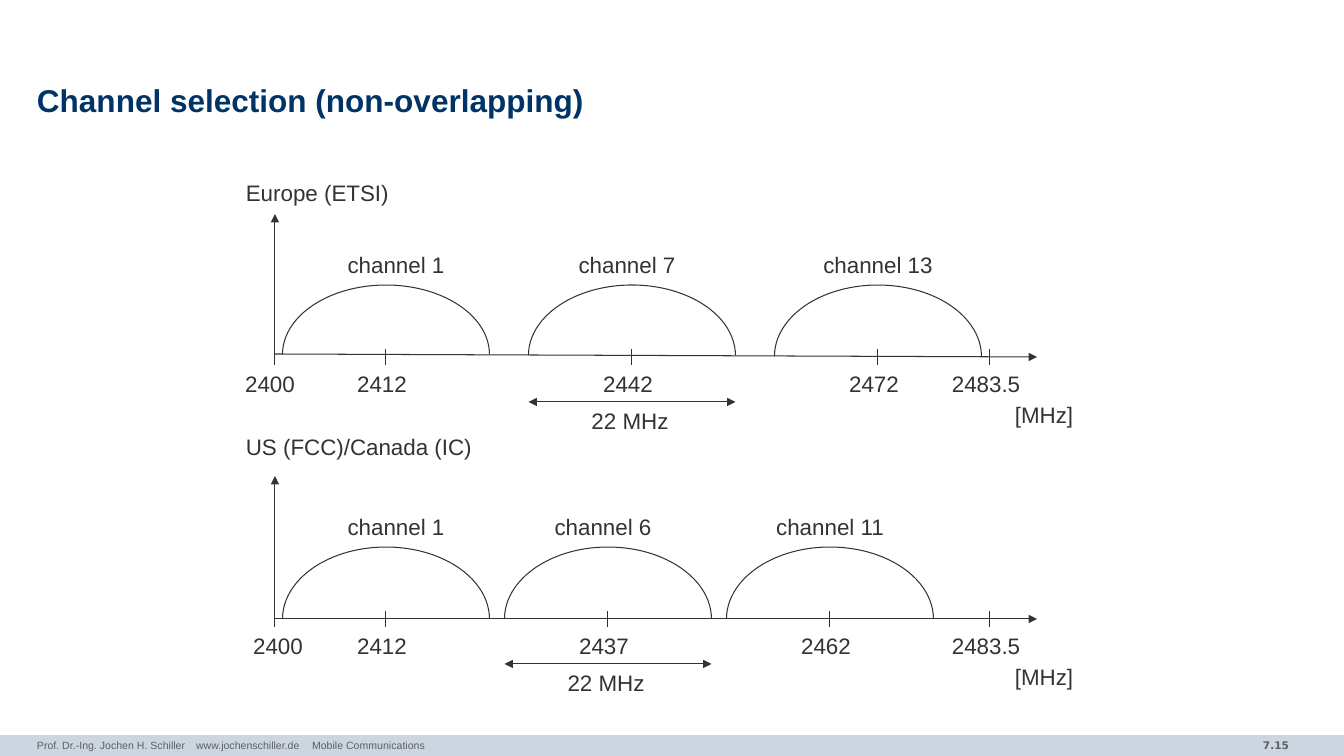
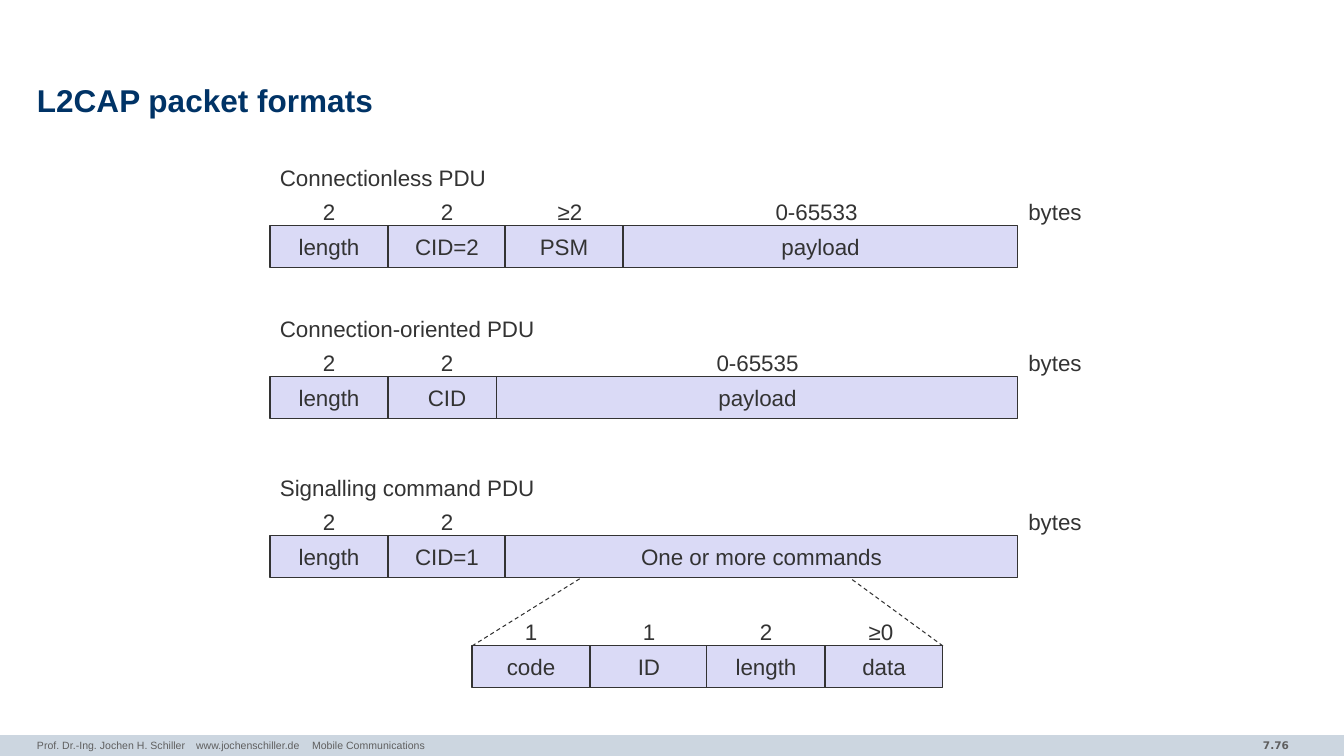
from lxml.etree import SubElement
from pptx import Presentation
from pptx.dml.color import RGBColor
from pptx.enum.dml import MSO_LINE
from pptx.enum.shapes import MSO_CONNECTOR, MSO_SHAPE
from pptx.enum.text import MSO_ANCHOR as Anchor, PP_ALIGN as Align
from pptx.oxml.ns import qn
from pptx.util import Pt

EMU_PER_PX = 914400 / 100.8
SLIDE_WIDTH, SLIDE_HEIGHT = 1344, 756
INK, NAVY, GREY = "333333", "003366", "5F5F5F"
BAND, LAVENDER = "CCD6E0", "DADAF6"

NO_INSETS = {"margin_left": 0, "margin_top": 0, "margin_right": 0, "margin_bottom": 0}
BODY_FONT = {"name": "Arial", "size": Pt(16)}
TITLE = {
    "frame": {**NO_INSETS, "word_wrap": True, "vertical_anchor": Anchor.MIDDLE},
    "paragraph": {"line_spacing": 0.85},
    "font": {"name": "Arial", "size": Pt(22.5), "bold": True},
    "color": NAVY,
}
FOOTER = {
    "frame": {"word_wrap": True, "margin_left": 0, "margin_right": 0},
    "paragraph": {},
    "font": {"name": "Arial", "size": Pt(7.5)},
    "color": GREY,
}
PAGE_NUMBER = {
    "frame": {"word_wrap": True},
    "paragraph": {"alignment": Align.RIGHT},
    "font": {"name": "DejaVu Sans", "size": Pt(7.5), "bold": True},
    "color": GREY,
}
HEADING = {
    "frame": {"word_wrap": True},
    "paragraph": {"alignment": Align.LEFT},
    "font": BODY_FONT,
    "color": INK,
}
LABEL = {
    "frame": {"word_wrap": False},
    "paragraph": {"alignment": Align.CENTER},
    "font": BODY_FONT,
    "color": INK,
}
FIELD = {**LABEL, "frame": {"word_wrap": False, "vertical_anchor": Anchor.MIDDLE}}

FOOTER_PARTS = (
    "Prof. Dr.-Ing. Jochen H. Schiller",
    "www.jochenschiller.de",
    "Mobile Communications",
)
FOOTER_TABS = (159, 275)

AXIS_X, AXIS_END, BAND_END = 275, 1037, 990
FIRST_CHANNEL, ARC_WIDTH = 386, 207
COLUMNS = (270, 388, 505, 623)
FIELD_WIDTH, FIELD_HEIGHT, ROW_END = 118, 42, 1018
COMMAND_SHIFT = 202


def px(length):
    return round(length * EMU_PER_PX)


def rgb(color):
    return RGBColor.from_string(color)


def apply(target, values):
    for name, value in values.items():
        setattr(target, name, value)


def write(frame, text, style):
    apply(frame, style["frame"])
    paragraph = frame.paragraphs[0]
    apply(paragraph, style["paragraph"])
    run = paragraph.add_run()
    run.text = text
    apply(run.font, style["font"])
    run.font.color.rgb = rgb(style["color"])
    return paragraph


def add_text(slide, text, left, top, width, height, style):
    area = slide.shapes.add_textbox(px(left), px(top), px(width), px(height))
    return write(area.text_frame, text, style)


def add_label(slide, text, center, top, width):
    add_text(slide, text, center - width / 2, top, width, 37, LABEL)


def add_heading(slide, text, left, top):
    add_text(slide, text, left, top, 275, 37, HEADING)


def add_outline(slide, kind, left, top, width, height, fill=None, line=INK):
    outline = slide.shapes.add_shape(kind, px(left), px(top), px(width), px(height))
    outline.shadow.inherit = False
    if fill:
        outline.fill.solid()
        outline.fill.fore_color.rgb = rgb(fill)
    else:
        outline.fill.background()
    if line:
        outline.line.color.rgb = rgb(line)
        outline.line.width = Pt(0.75)
    else:
        outline.line.fill.background()
    return outline


def add_line(slide, start, end, arrows=(), dash=None):
    points = [px(value) for value in (*start, *end)]
    connector = slide.shapes.add_connector(MSO_CONNECTOR.STRAIGHT, *points)
    connector.line.color.rgb = rgb(INK)
    apply(connector.line, {"width": Pt(0.75), "dash_style": dash})
    for arrow in arrows:
        SubElement(connector.get_or_add_ln(), qn(f"a:{arrow}"), type="triangle")
    SubElement(connector.element.spPr, qn("a:effectLst"))


def add_slide(deck, title, number):
    slide = deck.slides.add_slide(deck.slide_layouts[6])
    add_outline(slide, MSO_SHAPE.RECTANGLE, 0, 735, SLIDE_WIDTH, 21, BAND, None)
    add_text(slide, number, 1119, 734, 180, 23, PAGE_NUMBER)
    add_text(slide, title, 37, 79, 1270, 47, TITLE)
    credit = add_text(slide, "\t".join(FOOTER_PARTS), 37, 734, 879, 22, FOOTER)
    tabs = SubElement(credit._p.get_or_add_pPr(), qn("a:tabLst"))
    for position in FOOTER_TABS:
        SubElement(tabs, qn("a:tab"), pos=str(px(position)), algn="l")
    return slide


def add_arc(slide, center, top, base):
    arc = add_outline(slide, MSO_SHAPE.ARC, center - ARC_WIDTH / 2, top,
                      ARC_WIDTH, 2 * (base - top))
    arc.adjustments[0] = 108
    arc.adjustments[1] = 0


def add_tick(slide, x, base):
    add_line(slide, (x, base - 8), (x, base + 8))


def add_spectrum(slide, base, step, channels, origin_label, rise=0):
    add_line(slide, (AXIS_X, base - rise), (AXIS_END, base), ["tailEnd"])
    add_line(slide, (AXIS_X, base), (AXIS_X, base - 143), ["tailEnd"])
    for x in (AXIS_X, BAND_END):
        add_tick(slide, x, base)
    add_label(slide, "2400", origin_label, base + 8, 70)
    add_label(slide, "2483.5", BAND_END - 4, base + 8, 89)
    add_label(slide, "[MHz]", 1044, base + 39, 79)
    for index, (name, frequency, shift) in enumerate(channels):
        center = FIRST_CHANNEL + index * step
        sag = rise * (AXIS_END - center) / (AXIS_END - AXIS_X)
        add_arc(slide, center, base - 72, base - sag)
        add_tick(slide, center, base)
        add_label(slide, name, center + shift, base - 111, 130)
        add_label(slide, frequency, center - 4, base + 8, 70)
    middle, reach = FIRST_CHANNEL + step, ARC_WIDTH / 2
    add_line(slide, (middle - reach, base + 45), (middle + reach, base + 45),
             ["headEnd", "tailEnd"])
    add_label(slide, "22 MHz", middle - 2, base + 45, 98)


def add_fields(slide, top, fields):
    for name, size, left, right, shift in fields:
        cell = add_outline(slide, MSO_SHAPE.RECTANGLE, left, top, right - left,
                           FIELD_HEIGHT, LAVENDER)
        write(cell.text_frame, name, FIELD)
        if size:
            width = 103 if len(size) > 2 else 46
            add_label(slide, size, (left + right) / 2 + shift, top - 33, width)


def add_packet(slide, top, title, channel_id, fields):
    add_heading(slide, title, COLUMNS[0], top - 67)
    header = [
        (name, "2", left, left + FIELD_WIDTH, 0)
        for name, left in zip(("length", channel_id), COLUMNS)
    ]
    add_fields(slide, top, header + fields)
    add_label(slide, "bytes", 1055, top - 33, 74)


def build_channels(deck):
    slide = add_slide(deck, "Channel selection (non-overlapping)", "7.15")
    add_heading(slide, "Europe (ETSI)", 236, 174)
    add_spectrum(slide, 357, 246, [
        ("channel 1", "2412", 10),
        ("channel 7", "2442", -5),
        ("channel 13", "2472", 0),
    ], origin_label=270, rise=3)
    add_heading(slide, "US (FCC)/Canada (IC)", 236, 428)
    add_spectrum(slide, 619, 222, [
        ("channel 1", "2412", 10),
        ("channel 6", "2437", -5),
        ("channel 11", "2462", 0),
    ], origin_label=278)


def build_packets(deck):
    slide = add_slide(deck, "L2CAP packet formats", "7.76")
    add_packet(slide, 226, "Connectionless PDU", "CID=2", [
        ("PSM", "≥2", COLUMNS[2], COLUMNS[3], 6),
        ("payload", "0-65533", COLUMNS[3], ROW_END, -4),
    ])
    add_packet(slide, 377, "Connection-oriented PDU", "CID", [
        ("payload", "0-65535", 497, ROW_END, 0),
    ])
    signalling_top, command_top = 536, 646
    add_packet(slide, signalling_top, "Signalling command PDU", "CID=1", [
        ("One or more commands", "", COLUMNS[2], ROW_END, 0),
    ])
    command = (("code", "1", 0), ("ID", "1", 0), ("length", "2", 0), ("data", "≥0", -3))
    lefts = [column + COMMAND_SHIFT for column in COLUMNS]
    add_fields(slide, command_top, [
        (name, size, left, left + FIELD_WIDTH, shift)
        for (name, size, shift), left in zip(command, lefts)
    ])
    for outer, inner in ((lefts[0], 581), (lefts[-1] + FIELD_WIDTH, 850)):
        add_line(slide, (outer, command_top), (inner, signalling_top + FIELD_HEIGHT),
                 dash=MSO_LINE.DASH)


def main():
    deck = Presentation()
    apply(deck, {"slide_width": px(SLIDE_WIDTH), "slide_height": px(SLIDE_HEIGHT)})
    build_channels(deck)
    build_packets(deck)
    deck.save("out.pptx")


if __name__ == "__main__":
    main()
